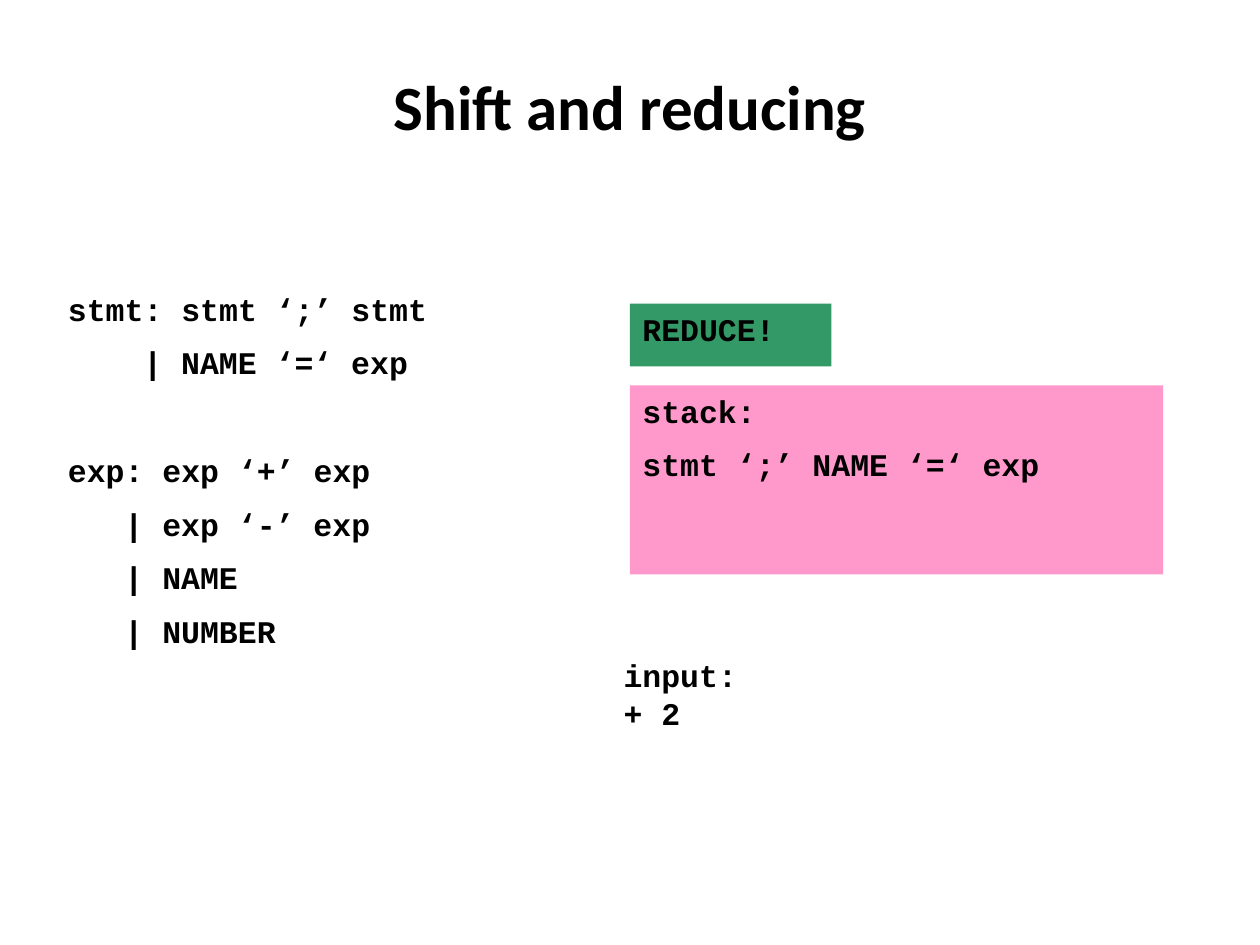
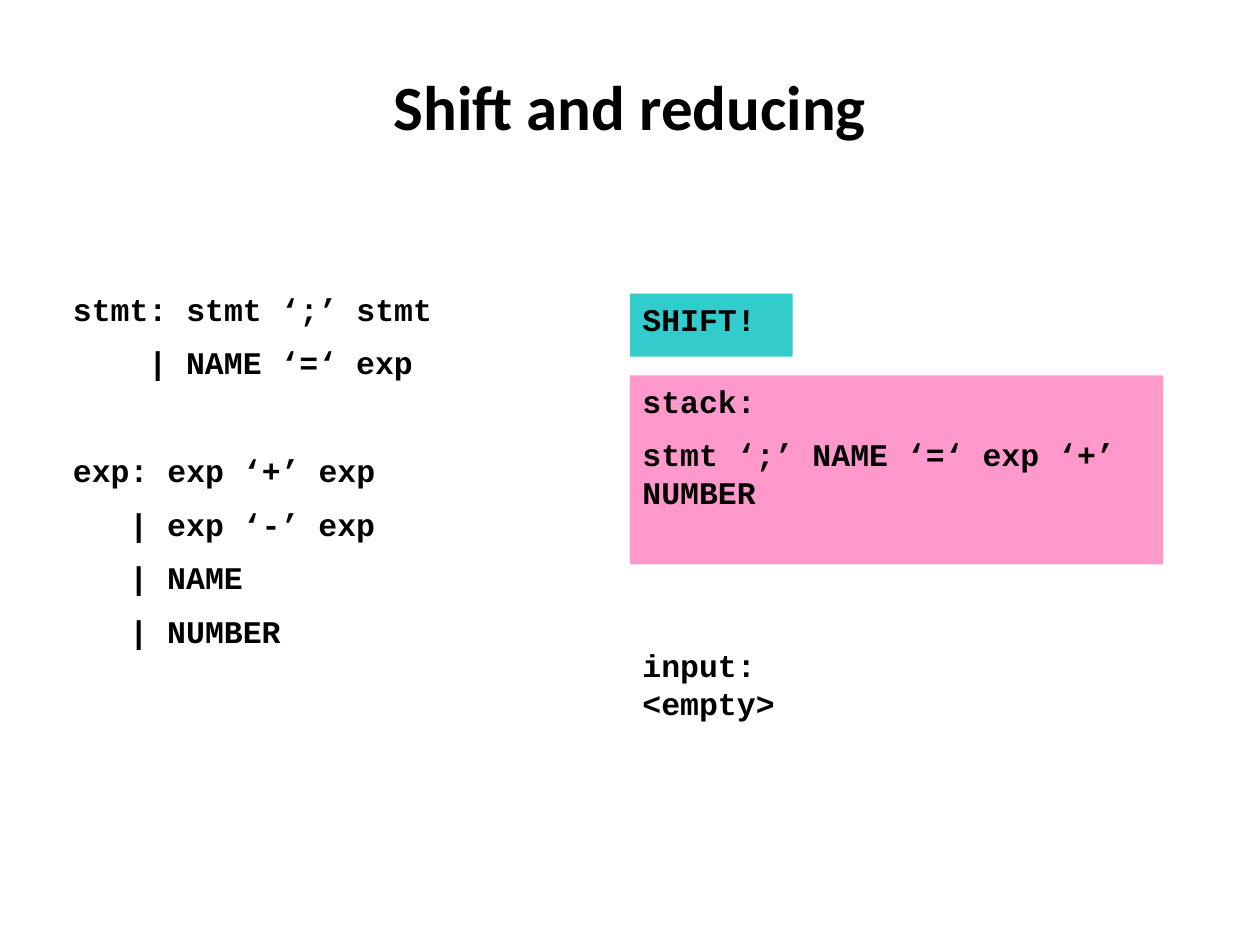
from dataclasses import dataclass

from pptx import Presentation
from pptx.dml.color import RGBColor
from pptx.enum.shapes import MSO_SHAPE
from pptx.enum.text import MSO_ANCHOR, PP_ALIGN
from pptx.shapes.autoshape import Shape
from pptx.slide import Slide
from pptx.util import Cm, Pt

RECTANGLE = MSO_SHAPE.RECTANGLE
TOP, MIDDLE = MSO_ANCHOR.TOP, MSO_ANCHOR.MIDDLE
LEFT, CENTER = PP_ALIGN.LEFT, PP_ALIGN.CENTER

COLORS = {
    "text": "000000",
    "stack": "FF99CC",
    "reduce": "339966",
    "shift": "33CCCC",
}
TITLE_FONT, CODE_FONT = "Calibri", "Courier New"
TITLE_SIZE, CODE_SIZE = 36, 18
CHARACTER_WIDTH = 0.38
LINE_GAP, RULE_GAP = 9, 40
RIGHT_COLUMN = 12.7
STACK_OFFSET, INPUT_OFFSET = 1.65, 6.98


@dataclass(frozen=True)
class Box:
    left: float
    top: float
    width: float
    height: float


@dataclass(frozen=True)
class Line:
    text: str
    gap: float = 0
    indent: int = 0


@dataclass(frozen=True)
class ParserStep:
    action: str
    color: str
    action_top: float
    action_width: float
    stack: str
    remaining_input: str
    input_left: float
    grammar_left: float


TITLE_BOX = Box(1.27, 0.76, 22.86, 2.72)
GRAMMAR = [
    Line("stmt: stmt ‘;’ stmt"),
    Line("| NAME ‘=‘ exp", LINE_GAP, 4),
    Line("exp: exp ‘+’ exp", RULE_GAP),
    Line("| exp ‘-’ exp", LINE_GAP, 3),
    Line("| NAME", LINE_GAP, 3),
    Line("| NUMBER", LINE_GAP, 3),
]
STEPS = [
    ParserStep("REDUCE!", "reduce", 6.12, 4.06, "stmt ‘;’ NAME ‘=‘ exp",
               "+ 2", 12.32, 1.12),
    ParserStep("SHIFT!", "shift", 5.92, 3.28, "stmt ‘;’ NAME ‘=‘ exp ‘+’ NUMBER",
               "<empty>", RIGHT_COLUMN, 1.22),
]


def write_lines(shape: Shape, lines: list[Line], font: str = CODE_FONT,
                size: float = CODE_SIZE, alignment: PP_ALIGN = LEFT,
                anchor: MSO_ANCHOR = TOP) -> None:
    frame = shape.text_frame
    frame.word_wrap = True
    frame.vertical_anchor = anchor
    for index, line in enumerate(lines):
        paragraph = frame.add_paragraph() if index else frame.paragraphs[0]
        paragraph.text = line.text
        paragraph.alignment = alignment
        paragraph.space_before = Pt(line.gap)
        if line.indent:
            margin = Cm(line.indent * CHARACTER_WIDTH)
            paragraph._p.get_or_add_pPr().set("marL", str(margin))
        paragraph.font.name = font
        paragraph.font.size = Pt(size)
        paragraph.font.bold = True
        paragraph.font.color.rgb = RGBColor.from_string(COLORS["text"])


def add_text(slide: Slide, box: Box) -> Shape:
    return slide.shapes.add_textbox(
        Cm(box.left), Cm(box.top), Cm(box.width), Cm(box.height))


def add_panel(slide: Slide, box: Box, color: str) -> Shape:
    shape = slide.shapes.add_shape(
        RECTANGLE, Cm(box.left), Cm(box.top), Cm(box.width), Cm(box.height))
    shape.shadow.inherit = False
    shape.fill.solid()
    shape.fill.fore_color.rgb = RGBColor.from_string(COLORS[color])
    shape.line.fill.background()
    return shape


def add_step(presentation: Presentation, step: ParserStep) -> None:
    slide = presentation.slides.add_slide(presentation.slide_layouts[6])
    write_lines(add_text(slide, TITLE_BOX), [Line("Shift and reducing")],
                TITLE_FONT, TITLE_SIZE, CENTER, MIDDLE)
    write_lines(add_text(slide, Box(step.grammar_left, 5.72, 10.4, 10.39)), GRAMMAR)

    input_box = Box(step.input_left, step.action_top + INPUT_OFFSET, 3.76, 2.29)
    write_lines(add_text(slide, input_box),
                [Line("input:"), Line(step.remaining_input)])

    stack_box = Box(RIGHT_COLUMN, step.action_top + STACK_OFFSET, 10.75, 3.81)
    write_lines(add_panel(slide, stack_box, "stack"),
                [Line("stack:"), Line(step.stack, LINE_GAP)])

    action_box = Box(RIGHT_COLUMN, step.action_top, step.action_width, 1.27)
    write_lines(add_panel(slide, action_box, step.color), [Line(step.action)])


def main() -> None:
    presentation = Presentation()
    presentation.slide_width = Cm(25.4)
    presentation.slide_height = Cm(19.05)
    for step in STEPS:
        add_step(presentation, step)
    presentation.save("out.pptx")


if __name__ == "__main__":
    main()
